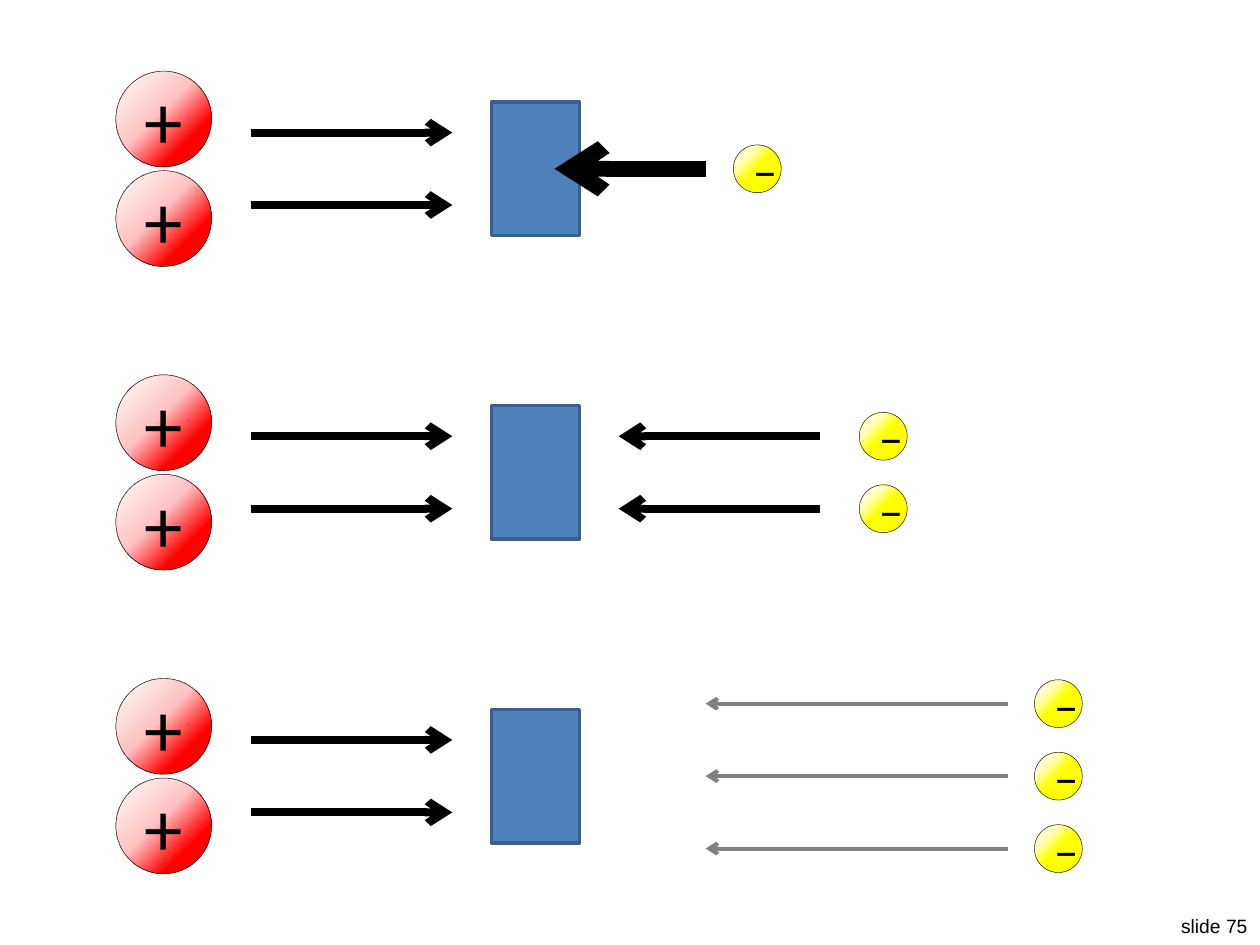
from dataclasses import dataclass

from lxml.etree import SubElement
from pptx import Presentation
from pptx.dml.color import RGBColor
from pptx.enum.shapes import MSO_CONNECTOR, MSO_SHAPE
from pptx.enum.text import MSO_ANCHOR, PP_ALIGN
from pptx.oxml import parse_xml
from pptx.oxml.ns import nsdecls, qn
from pptx.util import Inches, Pt


@dataclass(frozen=True)
class Theme:
    black: str = "000000"
    gray: str = "808080"
    block: str = "4F81BD"
    edge: str = "3A5F8C"
    red: tuple = ((0, "FFFFFF"), (45, "FFC1C1"), (74, "FF0000"), (100, "FF0000"))
    yellow: tuple = ((0, "FFFFFF"), (26, "FFFFBD"), (49, "FFFF00"), (100, "FFFF00"))
    sign: str = "Calibri"
    label: str = "Arial"
    plus: int = 44
    minus: int = 28
    small: int = 11


THEME = Theme()
STEP = 0.575


def color(code):
    return RGBColor.from_string(code)


def spread(mid, count, gap):
    return [mid + (i - (count - 1) / 2) * gap for i in range(count)]


def style_text(frame, text, font, size, align):
    frame.text = text
    para = frame.paragraphs[0]
    para.alignment = align
    face = para.runs[0].font
    face.name = font
    face.size = Pt(size)
    face.color.rgb = color(THEME.black)


def add_shape(slide, kind, x, y, wide, high, edge, width):
    shape = slide.shapes.add_shape(
        kind, Inches(x - wide / 2), Inches(y - high / 2), Inches(wide), Inches(high))
    shape.shadow.inherit = False
    shape.line.color.rgb = color(edge)
    shape.line.width = Pt(width)
    return shape


def add_block(slide, y):
    block = add_shape(slide, MSO_SHAPE.RECTANGLE, 4.25, y, 0.7, 1.06, THEME.edge, 2)
    block.fill.solid()
    block.fill.fore_color.rgb = color(THEME.block)


def add_ball(slide, x, y, size, stops, sign, points):
    ball = add_shape(slide, MSO_SHAPE.OVAL, x, y, size, size, THEME.black, 0.25)
    ball.fill.background()
    marks = "".join(
        f'<a:gs pos="{pos * 1000}"><a:srgbClr val="{code}"/></a:gs>'
        for pos, code in stops)
    grad = parse_xml(
        f'<a:gradFill {nsdecls("a")} rotWithShape="1"><a:gsLst>{marks}</a:gsLst>'
        '<a:path path="circle"><a:fillToRect r="100000" b="100000"/></a:path>'
        '</a:gradFill>')
    props = ball._element.spPr
    props.replace(props.find(qn("a:noFill")), grad)
    ball.text_frame.vertical_anchor = MSO_ANCHOR.MIDDLE
    style_text(ball.text_frame, sign, THEME.sign, points, PP_ALIGN.CENTER)


def add_arrow(slide, start, end, y, width, code):
    arrow = slide.shapes.add_connector(
        MSO_CONNECTOR.STRAIGHT, Inches(start), Inches(y), Inches(end), Inches(y))
    arrow.line.color.rgb = color(code)
    arrow.line.width = Pt(width)
    SubElement(arrow.line._get_or_add_ln(), qn("a:tailEnd"), type="arrow")
    SubElement(arrow._element.spPr, qn("a:effectLst"))


def add_row(slide, mid, count, ball, start, end, width, code):
    add_block(slide, mid)
    for y in spread(mid, 2, 0.79):
        add_ball(slide, 1.3, y, 0.76, THEME.red, "+", THEME.plus)
    for y in spread(mid, 2, STEP):
        add_arrow(slide, 1.99, 3.59, y, 4.5, THEME.black)
    for y in spread(mid, count, STEP):
        add_ball(slide, ball, y, 0.38, THEME.yellow, "‒", THEME.minus)
        add_arrow(slide, start, end, y, width, code)


def add_label(slide):
    box = slide.shapes.add_textbox(
        Inches(9.25), Inches(7.21), Inches(0.75), Inches(0.29))
    box.text_frame.word_wrap = False
    style_text(box.text_frame, "slide 75", THEME.label, THEME.small, PP_ALIGN.RIGHT)


def main():
    deck = Presentation()
    deck.slide_width = Inches(10)
    deck.slide_height = Inches(7.5)
    slide = deck.slides.add_slide(deck.slide_layouts[6])
    add_label(slide)
    rows = (
        (1, 6.01, 5.6, 4.4, 9, THEME.black),
        (2, 7.01, 6.51, 4.91, 4.5, THEME.black),
        (3, 8.4, 8, 5.6, 2.25, THEME.gray),
    )
    for mid, row in zip(spread(3.75, len(rows), 2.41), rows):
        add_row(slide, mid, *row)
    deck.save("out.pptx")


if __name__ == "__main__":
    main()
